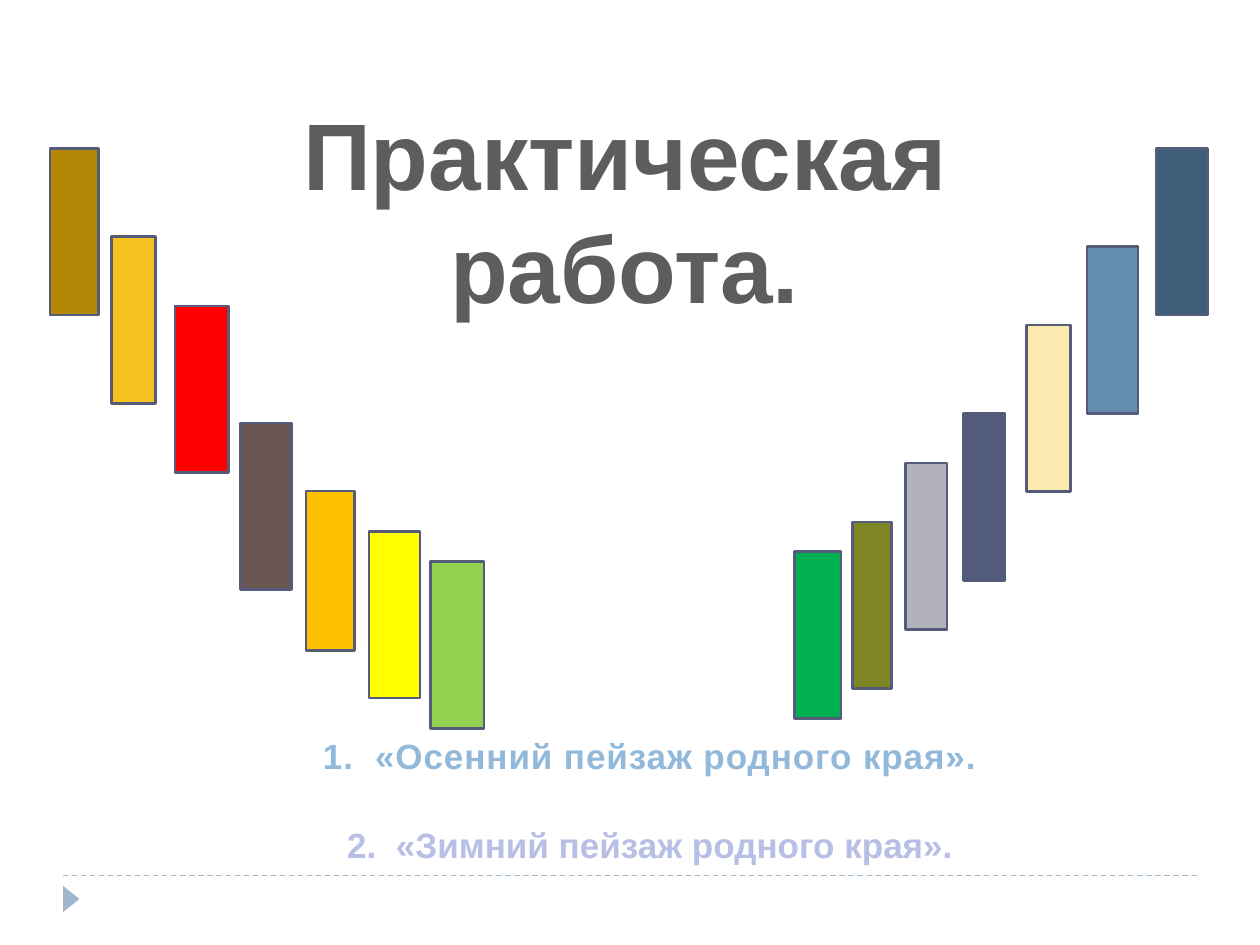
from dataclasses import dataclass

from lxml.etree import SubElement
from pptx import Presentation
from pptx.dml.color import RGBColor
from pptx.enum.dml import MSO_LINE_DASH_STYLE as Dash
from pptx.enum.shapes import MSO_CONNECTOR as Connector, MSO_SHAPE as Shape
from pptx.enum.text import MSO_ANCHOR as Anchor, PP_ALIGN as Align
from pptx.oxml.ns import qn
from pptx.slide import Slide
from pptx.util import Inches, Pt

COLUMNS, ROWS = 100, 75
COLORS = {
    "title": "5D5D5D", "autumn_text": "92B9DA", "winter_text": "B7BFE5",
    "accent": "9FB8CD", "outline": "545C79",
    "navy": "3E5D78", "amber": "FFC000", "brown": "6A5650", "yellow": "FFFF00",
    "red": "FF0000", "lime": "92D050", "green": "00B050", "olive": "7D8525",
    "indigo": "525B7E", "cream": "FCE9AF", "gold": "F7C120", "blue": "638CAE",
    "ochre": "B38807", "gray": "B2B2BE",
}
BARS = [
    ("navy", 93.8, 18.4, 17.2), ("amber", 26.2, 45.3, 16.4),
    ("brown", 21.1, 40.2, 17.2), ("yellow", 31.3, 48.8, 17.2),
    ("red", 16, 30.9, 18), ("lime", 36.3, 51.2, 18),
    ("green", 64.9, 50.4, 15.6), ("olive", 69.2, 48.05, 13.3),
    ("indigo", 78.1, 39.45, 14.1), ("cream", 83.2, 32.4, 14.8),
    ("gold", 10.6, 25.4, 14.8), ("blue", 88.3, 26.2, 17.2),
    ("ochre", 5.9, 18.4, 16.4), ("gray", 73.5, 43.35, 14.1),
]
BAR_LENGTHS = {"amber": 17.2}


def color(name):
    return RGBColor.from_string(COLORS[name])


def write(frame, text, *, size, fill, indent=0, spacing=0, line_height=None):
    frame.word_wrap = True
    paragraph = frame.paragraphs[0]
    paragraph.alignment = Align.CENTER
    if line_height:
        paragraph.line_spacing = Pt(line_height)
    if indent:
        properties = paragraph._p.get_or_add_pPr()
        properties.set("marL", str(Inches(indent)))
        properties.set("indent", str(-Inches(indent)))
    run = paragraph.add_run()
    run.text = text
    run.font.name, run.font.size, run.font.bold = "Arial", Pt(size), True
    run.font.color.rgb = color(fill)
    if spacing:
        run._r.get_or_add_rPr().set("spc", str(int(spacing * 100)))


@dataclass
class Board:
    """Draws styled elements on one slide, measured in grid columns and rows."""
    presentation: Presentation
    slide: Slide
    line_width: float = 1.5

    def column(self, count):
        return int(self.presentation.slide_width * count / COLUMNS)

    def row(self, count):
        return int(self.presentation.slide_height * count / ROWS)

    def box(self, left, top, width, height):
        return self.column(left), self.row(top), self.column(width), self.row(height)

    def turned_shape(self, kind, center_x, center_y, width, height, fill, outline=None):
        place = self.box(center_x - width / 2, center_y - height / 2, width, height)
        shape = self.slide.shapes.add_shape(kind, *place)
        shape.rotation = 90
        shape.shadow.inherit = False
        shape.fill.solid()
        shape.fill.fore_color.rgb = color(fill)
        if outline:
            shape.line.color.rgb = color(outline)
            shape.line.width = Pt(self.line_width)
        else:
            shape.line.fill.background()

    def text(self, left, top, width, height, text, **style):
        shape = self.slide.shapes.add_textbox(*self.box(left, top, width, height))
        shape.text_frame.vertical_anchor = Anchor.MIDDLE
        write(shape.text_frame, text, **style)

    def dashed_rule(self, left, right, level):
        rule = self.slide.shapes.add_connector(
            Connector.STRAIGHT, self.column(left), self.row(level),
            self.column(right), self.row(level))
        rule.line.color.rgb = color("accent")
        rule.line.width = Pt(0.75)
        rule.line.dash_style = Dash.DASH
        SubElement(rule._element.spPr, qn("a:effectLst"))


def main():
    presentation = Presentation()
    presentation.slide_width, presentation.slide_height = Inches(10), Inches(7.5)
    slide = presentation.slides.add_slide(presentation.slide_layouts[6])
    board = Board(presentation, slide)

    board.dashed_rule(5, 95, 69.5)
    board.turned_shape(Shape.ISOSCELES_TRIANGLE, 5.65, 71.35, 2.1, 1.3, "accent")
    board.text(21.1, 7, 57, 19.2, "Практическая работа.",
               size=54, fill="title", line_height=64.6)
    board.text(8.6, 57.8, 85.9, 4.4, "1.  «Осенний пейзаж родного края».",
               size=20, fill="autumn_text", indent=0.56, spacing=0.5)
    board.text(5.5, 64.8, 92.2, 4.4, "2.  «Зимний пейзаж родного края».",
               size=20, fill="winter_text")
    for name, center_x, center_y, thickness in BARS:
        board.turned_shape(Shape.MATH_MINUS, center_x, center_y,
                           BAR_LENGTHS.get(name, 18), thickness, name, "outline")

    presentation.save("out.pptx")


if __name__ == "__main__":
    main()
